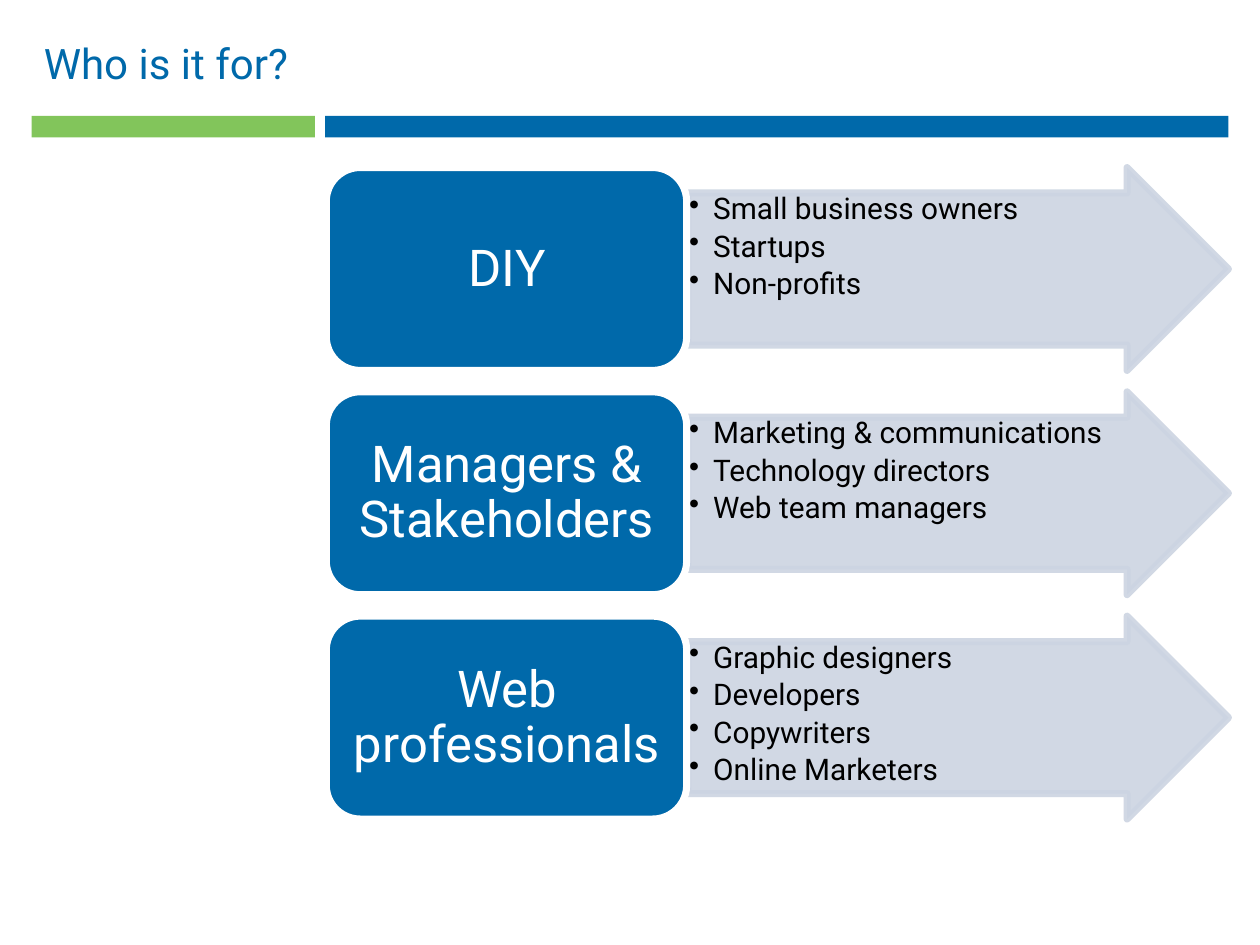
from lxml import etree
from pptx import Presentation
from pptx.dml.color import RGBColor
from pptx.enum import shapes, text
from pptx.oxml.ns import qn
from pptx.util import Inches, Pt

BLUE = RGBColor(0x00, 0x69, 0xAA)
GREEN = RGBColor(0x82, 0xC5, 0x5B)
PALE = RGBColor(0xCC, 0xD4, 0xE2)
WHITE = RGBColor(0xFF, 0xFF, 0xFF)
BLACK = RGBColor(0x00, 0x00, 0x00)
FONT = "Roboto"

AUDIENCES = [
    ("DIY", ["Small business owners", "Startups", "Non-profits"]),
    ("Managers & Stakeholders",
     ["Marketing & communications", "Technology directors", "Web team managers"]),
    ("Web professionals",
     ["Graphic designers", "Developers", "Copywriters", "Online Marketers"]),
]
ROW_TOP, ROW_PITCH, ROW_HEIGHT = 1.33, 1.78, 1.61


def add_block(s, kind, left, top, width, height, fill, line=None):
    sp = s.shapes.add_shape(kind, Inches(left), Inches(top), Inches(width), Inches(height))
    sp.shadow.inherit = False
    sp.fill.solid()
    sp.fill.fore_color.rgb = fill
    if line is None:
        sp.line.fill.background()
    else:
        sp.line.color.rgb = line
        sp.line.width = Pt(4)
        etree.SubElement(sp.line._get_or_add_ln(), qn("a:round"))
    return sp


def add_textbox(s, left, top, width, height, inset_x=0.1, inset_y=0.05):
    box = s.shapes.add_textbox(Inches(left), Inches(top), Inches(width), Inches(height))
    tf = box.text_frame
    tf.word_wrap = True
    tf.margin_left = tf.margin_right = Inches(inset_x)
    tf.margin_top = tf.margin_bottom = Inches(inset_y)
    return tf


def add_run(p, wording, size, color):
    r = p.add_run()
    r.text = wording
    r.font.name = FONT
    r.font.size = Pt(size)
    r.font.color.rgb = color


def set_bullet(p):
    pPr = p._p.get_or_add_pPr()
    pPr.set("marL", str(Inches(0.19)))
    pPr.set("indent", str(-Inches(0.19)))
    etree.SubElement(pPr, qn("a:buChar")).set("char", "•")


def add_arrow(s, top, items):
    arrow = add_block(s, shapes.MSO_SHAPE.RIGHT_ARROW, 5.46, top, 4.29, ROW_HEIGHT, PALE, PALE)
    arrow.adjustments[0] = 0.75
    arrow.adjustments[1] = 0.5
    for color in arrow._element.spPr.iter(qn("a:srgbClr")):
        etree.SubElement(color, qn("a:alpha")).set("val", "90000")

    tf = add_textbox(s, 5.46, top + 0.2, 3.69, 1.21, 0.01, 0.01)
    for i, item in enumerate(items):
        p = tf.add_paragraph() if i else tf.paragraphs[0]
        p.level = 1
        set_bullet(p)
        p.line_spacing = 0.9
        p.space_after = Pt(3)
        add_run(p, item, 17, BLACK)


def add_label(s, top, label):
    add_block(s, shapes.MSO_SHAPE.ROUNDED_RECTANGLE, 2.59, top, 2.86, ROW_HEIGHT, BLUE, WHITE)
    tf = add_textbox(s, 2.67, top + 0.08, 2.71, 1.46, 0.12, 0.06)
    tf.vertical_anchor = text.MSO_ANCHOR.MIDDLE
    p = tf.paragraphs[0]
    p.alignment = text.PP_ALIGN.CENTER
    p.line_spacing = 0.9
    add_run(p, label, 29, WHITE)


def main():
    prs = Presentation()
    prs.slide_width, prs.slide_height = Inches(10), Inches(7.5)
    s = prs.slides.add_slide(prs.slide_layouts[6])

    # Title and the two-colour rule below it
    add_block(s, shapes.MSO_SHAPE.RECTANGLE, 2.58, 0.92, 7.17, 0.17, BLUE)
    add_block(s, shapes.MSO_SHAPE.RECTANGLE, 0.25, 0.92, 2.25, 0.17, GREEN)
    tf = add_textbox(s, 0.25, 0.25, 9, 0.5)
    tf.auto_size = text.MSO_AUTO_SIZE.SHAPE_TO_FIT_TEXT
    add_run(tf.paragraphs[0], "Who is it for?", 24, BLUE)

    # One row per audience: arrow with examples, then its label
    for i, (label, items) in enumerate(AUDIENCES):
        top = ROW_TOP + i * ROW_PITCH
        add_arrow(s, top, items)
        add_label(s, top, label)

    prs.save("out.pptx")


if __name__ == "__main__":
    main()
